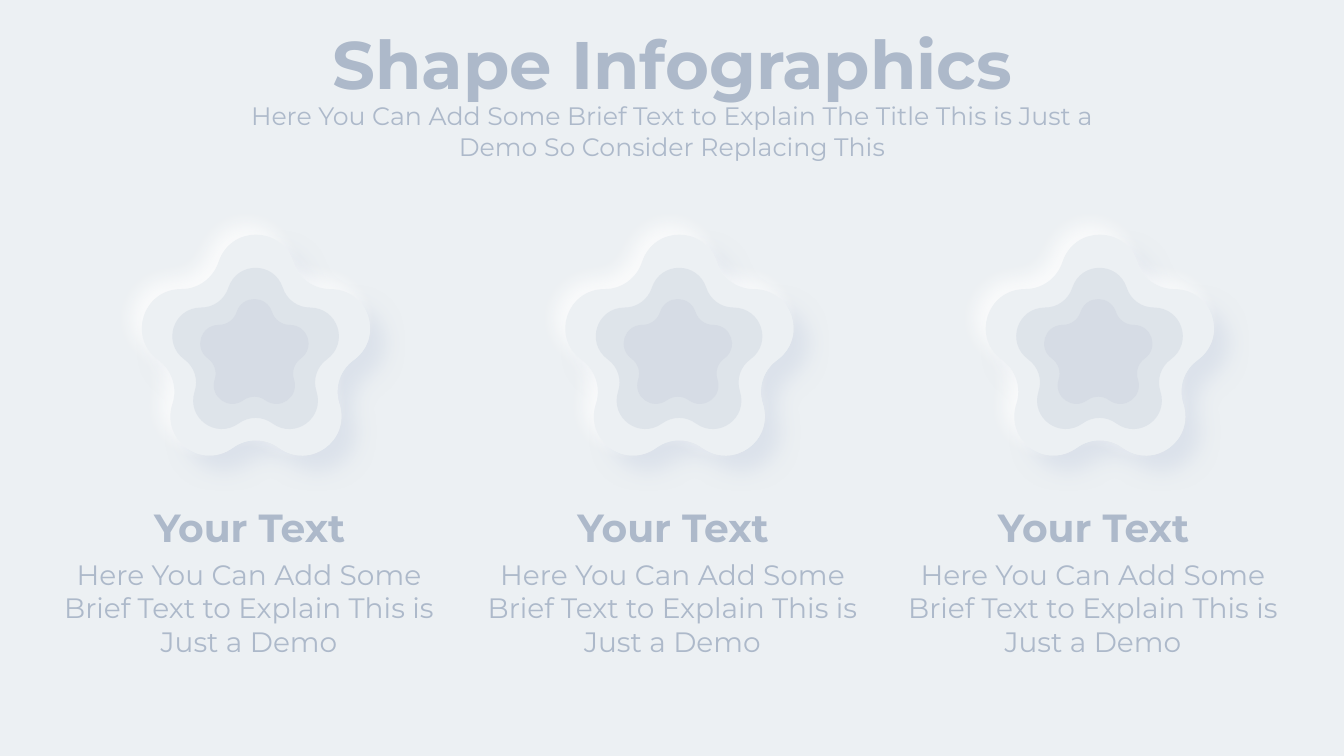
from math import cos, radians, sin

from lxml import etree
from pptx import Presentation
from pptx import util as u
from pptx.dml.color import RGBColor
from pptx.enum import text
from pptx.oxml.ns import qn

COLORS = {
    "background": "ECF0F3",
    "petal": "D6DCE5",
    "text": "ADB9CA",
    "shade": "D1D9E6",
    "light": "FFFFFF",
}
TILT = 32.6
STAR_SIZE = (2.27, 2.23)
STAR_CENTER = (1.15, 1.05)
MIDDLE_Y = 3.545
# One lobe, then the valley to the next, relative to the star's center
LOBE_START = (-0.37, -0.90)
LOBE = [(-0.25, -1.26), (0.25, -1.26), (0.37, -0.90)]
VALLEY = [(0.42, -0.74), (0.57, -0.63), (0.74, -0.63)]
COLUMN_LEFTS = (0.3, 4.5, 8.67)
COLUMN_TEXT = "Here You Can Add Some Brief Text to Explain This is Just a Demo"
SUBTITLE = ("Here You Can Add Some Brief Text to Explain The Title "
            "This is Just a Demo So Consider Replacing This")


def turn(point, degrees):
    x, y = point
    angle = radians(degrees)
    return x * cos(angle) - y * sin(angle), x * sin(angle) + y * cos(angle)


def add_child(parent, tag, **attributes):
    values = {name: str(value) for name, value in attributes.items()}
    return etree.SubElement(parent, qn(f"a:{tag}"), values)


def add_alpha(color, percent):
    add_child(color, "alpha", val=percent * 1000)


class InfographicPage:
    font = "Montserrat"

    def __init__(self, deck):
        self.page = deck.slides.add_slide(deck.slide_layouts[6])
        fill = self.page.background.fill
        fill.solid()
        fill.fore_color.rgb = self.color("background")

    def color(self, name):
        return RGBColor.from_string(COLORS[name])

    def text(self, content, left, top, width, height, size=18, bold=False):
        box = self.page.shapes.add_textbox(
            u.Inches(left), u.Inches(top), u.Inches(width), u.Inches(height))
        frame = box.text_frame
        frame.word_wrap = True
        frame.auto_size = text.MSO_AUTO_SIZE.SHAPE_TO_FIT_TEXT
        para = frame.paragraphs[0]
        para.alignment = text.PP_ALIGN.CENTER
        span = para.add_run()
        span.text = content
        span.font.name = self.font
        span.font.size = u.Pt(size)
        span.font.bold = bold
        span.font.color.rgb = self.color("text")

    def star(self, center_x, scale, fill, opacity=100):
        """Draw a tilted five-lobed star, its box centered at center_x."""
        width, height = (side * scale for side in STAR_SIZE)
        corners = [(u.Inches(x), u.Inches(y))
                   for x, y in ((width, 0), (width, height), (0, height))]
        builder = self.page.shapes.build_freeform(0, 0)
        builder.add_line_segments(corners)
        star = builder.convert_to_shape(
            u.Inches(center_x - width / 2), u.Inches(MIDDLE_Y - height / 2))
        self.curve_outline(star, scale)
        star.rotation = TILT
        star.shadow.inherit = False
        star.line.fill.background()
        star.fill.solid()
        star.fill.fore_color.rgb = self.color(fill)
        if opacity < 100:
            add_alpha(next(star._element.spPr.iter(qn("a:srgbClr"))), opacity)
        return star

    def curve_outline(self, star, scale):
        """Replace the box outline by five lobes joined by valleys."""
        outline = next(star._element.iter(qn("a:path")))
        for child in list(outline):
            outline.remove(child)

        def add_points(tag, points, degrees):
            segment = add_child(outline, tag)
            for point in points:
                offset = turn(point, degrees)
                x, y = (u.Inches((c + d) * scale)
                        for c, d in zip(STAR_CENTER, offset))
                add_child(segment, "pt", x=x, y=y)

        add_points("moveTo", [LOBE_START], -TILT)
        for lobe in range(5):
            for curve in (LOBE, VALLEY):
                add_points("cubicBezTo", curve, 72 * lobe - TILT)
        add_child(outline, "close")

    def cast_shadow(self, star, color, opacity, distance, direction):
        effects = star._element.spPr.find(qn("a:effectLst"))
        shadow = add_child(
            effects, "outerShdw", blurRad=u.Pt(15), dist=u.Pt(distance),
            dir=direction * 60000, algn="ctr", rotWithShape=0)
        add_alpha(add_child(shadow, "srgbClr", val=COLORS[color]), opacity)

    def raised_star(self, center_x):
        """Stack two equal stars, one shaded below and one lit from above."""
        layers = []
        for shadow in (("shade", 60, 15, 45), ("light", 80, 10, 225)):
            layer = self.star(center_x, 1, "background")
            self.cast_shadow(layer, *shadow)
            layers.append(layer)
        self.page.shapes.add_group_shape(layers)

    def column(self, left):
        center_x = left + 2.19
        self.raised_star(center_x)
        self.star(center_x + 0.01, 0.73, "petal", opacity=60)
        self.star(center_x + 0.01, 0.475, "petal")
        self.text("Your Text", left, 4.94, 4.35, 0.57, size=28, bold=True)
        self.text(COLUMN_TEXT, left, 5.48, 4.34, 1.11, size=20)


def main():
    deck = Presentation()
    deck.slide_width = u.Inches(13.33)
    deck.slide_height = u.Inches(7.5)
    page = InfographicPage(deck)
    page.text("Shape Infographics", 2.78, 0.17, 7.78, 0.91, size=48, bold=True)
    page.text(SUBTITLE, 2.3, 0.95, 8.73, 0.71)
    for left in COLUMN_LEFTS:
        page.column(left)
    deck.save("out.pptx")


if __name__ == "__main__":
    main()
